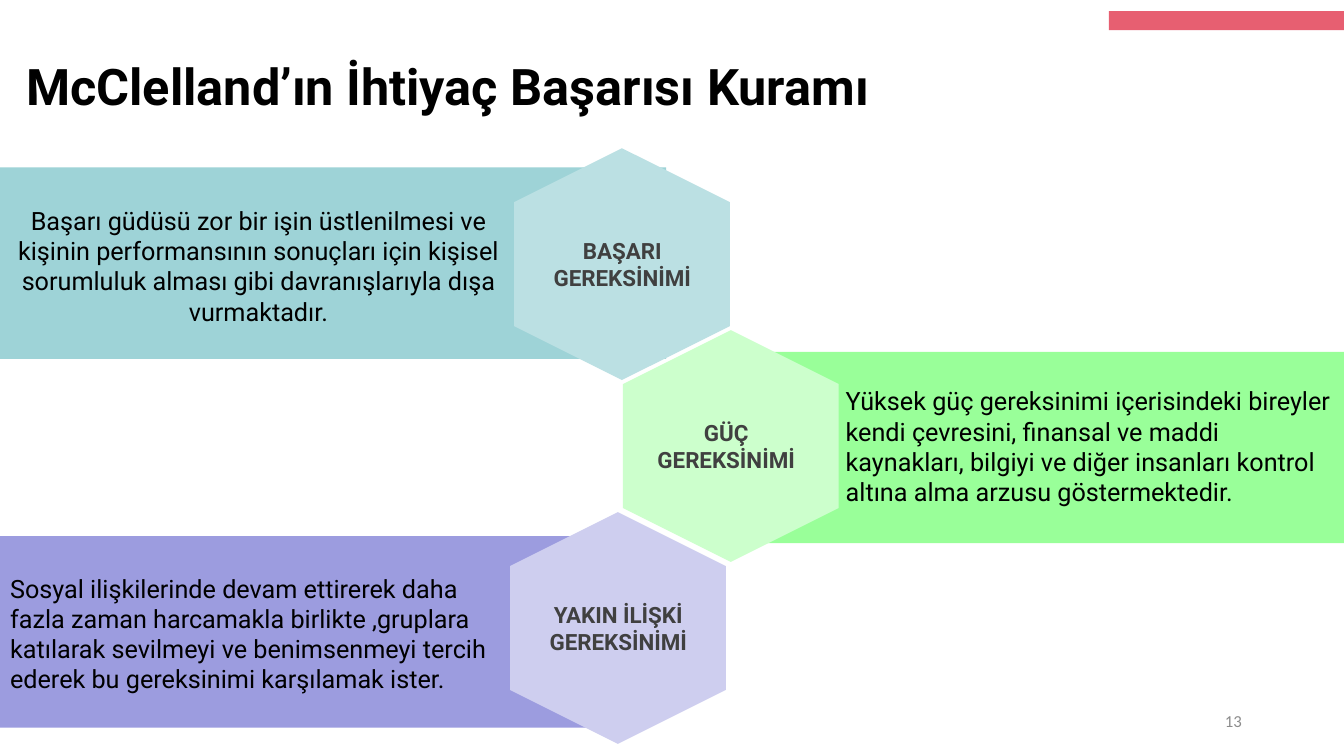
import pptx
import pptx.dml.color
import pptx.enum.shapes
import pptx.enum.text
import pptx.util

COLORS = {
    "accent": "E75F71", "text": "000000", "label": "404040", "number": "8C8C8C",
    "teal": "9ED3D7", "pale_teal": "BBE0E3",
    "green": "99FF99", "pale_green": "CCFFCC",
    "violet": "9C9CDF", "pale_violet": "CECEEF",
}
FORMATS = {
    "title": {"name": "Roboto", "size": 36, "bold": True, "color": "text"},
    "note": {"name": "Roboto", "size": 18, "bold": False, "color": "text"},
    "label": {"name": "Roboto", "size": 16, "bold": True, "color": "label"},
    "number": {"name": "Calibri", "size": 12, "bold": False, "color": "number"},
}
SHAPES = pptx.enum.shapes.MSO_SHAPE
ALIGN = pptx.enum.text.PP_ALIGN
ANCHOR = pptx.enum.text.MSO_ANCHOR

COLUMNS, ROWS = 160, 90
BAND_TOP, BAND_STEP, BAND_HEIGHT = 19.92, 21.96, 22.8
HEXAGON_MIDDLE, HEXAGON_STEP = 31.44, 21.66
HEXAGON_WIDTH, HEXAGON_HEIGHT = 27.6, 25.68
LABEL_WIDTH, LABEL_HEIGHT = 18.12, 6.48
NOTE_HEIGHT = 14.52

NEEDS = [
    {"band": (0, 79.32), "colors": ("teal", "pale_teal"),
     "hexagon": 74.04, "label_middle": 74.1, "label": ["BAŞARI GEREKSİNİMİ"],
     "note_place": (0.36, 24.36, 60.84), "align": ALIGN.CENTER,
     "note": "Başarı güdüsü zor bir işin üstlenilmesi ve kişinin performansının "
             "sonuçları için kişisel sorumluluk alması gibi davranışlarıyla dışa "
             "vurmaktadır."},
    {"band": (89.52, 70.48), "colors": ("green", "pale_green"),
     "hexagon": 87, "label_middle": 86.46, "label": ["GÜÇ", "GEREKSİNİMİ"],
     "note_place": (100.68, 45.84, 59.16), "align": ALIGN.LEFT,
     "note": "Yüksek güç gereksinimi içerisindeki bireyler kendi çevresini, "
             "finansal ve maddi kaynakları, bilgiyi ve diğer insanları kontrol "
             "altına alma arzusu göstermektedir."},
    {"band": (0, 71.64), "colors": ("violet", "pale_violet"),
     "hexagon": 73.56, "label_middle": 73.62, "label": ["YAKIN İLİŞKİ GEREKSİNİMİ"],
     "note_place": (1.2, 68.16, 59.16), "align": ALIGN.LEFT,
     "note": "Sosyal ilişkilerinde devam ettirerek daha fazla zaman harcamakla "
             "birlikte ,gruplara katılarak sevilmeyi ve benimsenmeyi tercih ederek "
             "bu gereksinimi karşılamak ister."},
]


class PageBuilder:
    def __init__(self, deck):
        self.deck = deck
        self.page = deck.slides.add_slide(deck.slide_layouts[6])

    def place(self, left, top, width, height):
        column = self.deck.slide_width / COLUMNS
        row = self.deck.slide_height / ROWS
        return [round(value * unit) for value, unit in
                zip((left, top, width, height), (column, row, column, row))]

    def shape(self, kind, color, *area, rotation=0):
        shape = self.page.shapes.add_shape(kind, *self.place(*area))
        shape.shadow.inherit = False
        shape.fill.solid()
        shape.fill.fore_color.rgb = pptx.dml.color.RGBColor.from_string(COLORS[color])
        shape.line.fill.background()
        shape.rotation = rotation

    def hexagon(self, color, center, middle):
        self.shape(SHAPES.HEXAGON, color, center - HEXAGON_WIDTH / 2,
                   middle - HEXAGON_HEIGHT / 2, HEXAGON_WIDTH, HEXAGON_HEIGHT,
                   rotation=90)

    def text(self, lines, style, *area, align=ALIGN.LEFT, anchor=ANCHOR.MIDDLE):
        box = self.page.shapes.add_textbox(*self.place(*area))
        frame = box.text_frame
        settings = {"word_wrap": True, "vertical_anchor": anchor, "margin_left": 0,
                    "margin_top": 0, "margin_right": 0, "margin_bottom": 0}
        for name, value in settings.items():
            setattr(frame, name, value)
        for index, line in enumerate(lines):
            para = frame.add_paragraph() if index else frame.paragraphs[0]
            para.alignment = align
            span = para.add_run()
            span.text = line
            for name, value in FORMATS[style].items():
                if name == "color":
                    span.font.color.rgb = pptx.dml.color.RGBColor.from_string(COLORS[value])
                else:
                    setattr(span.font, name,
                            pptx.util.Pt(value) if name == "size" else value)

    def need(self, index, need):
        left, width = need["band"]
        band_color, hexagon_color = need["colors"]
        middle = HEXAGON_MIDDLE + index * HEXAGON_STEP
        self.shape(SHAPES.RECTANGLE, band_color, left,
                   BAND_TOP + index * BAND_STEP, width, BAND_HEIGHT)
        self.hexagon(hexagon_color, need["hexagon"], middle)
        self.text(need["label"], "label", need["label_middle"] - LABEL_WIDTH / 2,
                  middle - LABEL_HEIGHT / 2, LABEL_WIDTH, LABEL_HEIGHT,
                  align=ALIGN.CENTER)
        self.text([need["note"]], "note", *need["note_place"], NOTE_HEIGHT,
                  align=need["align"])


def main():
    deck = pptx.Presentation()
    deck.slide_width = pptx.util.Inches(13.33)
    deck.slide_height = pptx.util.Inches(7.5)
    builder = PageBuilder(deck)
    builder.shape(SHAPES.RECTANGLE, "accent", 132, 1.32, 28, 2.28)
    builder.text(["McClelland’ın İhtiyaç Başarısı Kuramı"], "title",
                 3.12, 6.6, 141.84, 7.32, anchor=ANCHOR.TOP)
    for index, need in enumerate(NEEDS):
        builder.need(index, need)
    builder.text(["13"], "number", 113.04, 83.4, 34.8, 4.8, align=ALIGN.RIGHT)
    deck.save("out.pptx")


if __name__ == "__main__":
    main()
